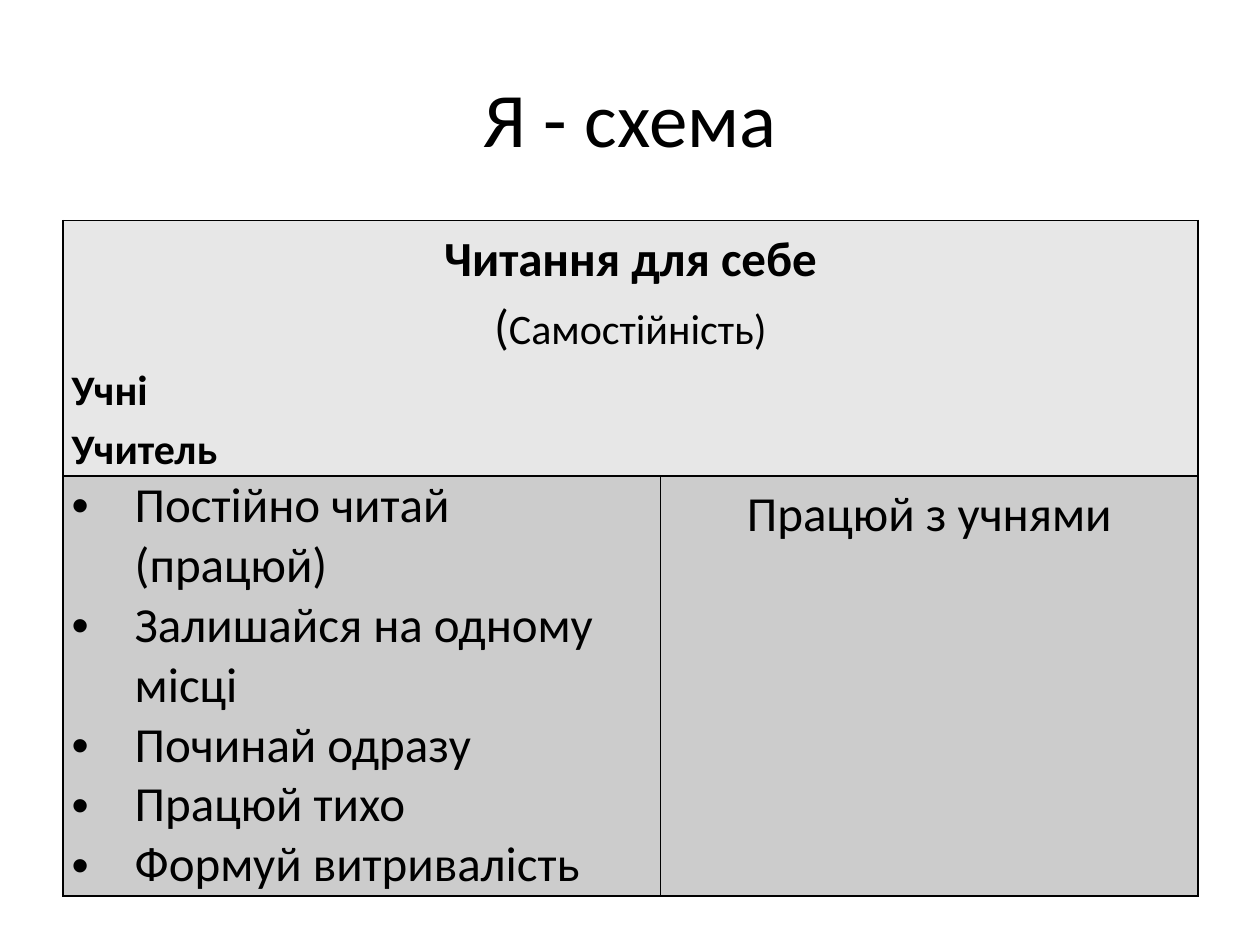
import pptx
import pptx.dml.color
import pptx.enum.text
import pptx.oxml
import pptx.oxml.ns
import pptx.util
from lxml import etree

Pt = pptx.util.Pt
ALIGN = pptx.enum.text.PP_ALIGN
ANCHOR = pptx.enum.text.MSO_ANCHOR

COLORS = {"text": "000000", "border": "000000", "header": "E7E7E7", "body": "CCCCCC"}
FONT = "Calibri"

# A paragraph is (style name, runs); a run is (text, size, bold).
TITLE = ("title", [("Я - схема", 44, False)])
HEADER = [
    ("centered", [("Читання для себе", 28, True)]),
    ("centered", [("(", 28, False), ("Самостійність)", 24, False)]),
    ("left", [("Учні", 24, True)]),
    ("left", [("Учитель", 24, True)]),
]
PUPIL_RULES = [
    "Постійно читай (працюй)",
    "Залишайся на одному місці",
    "Починай одразу",
    "Працюй тихо",
    "Формуй витривалість",
]
PUPILS = [("bullet", [(rule, 28, False)]) for rule in PUPIL_RULES]
TEACHER = [("centered", [("Працюй з учнями", 28, False)])]

STYLES = {
    "title": {"alignment": ALIGN.CENTER},
    "centered": {"alignment": ALIGN.CENTER, "line_spacing": 1.15},
    "left": {"alignment": ALIGN.LEFT, "line_spacing": 1.15},
    "bullet": {"alignment": ALIGN.LEFT},
}
CELL_FORMAT = {
    "margin_left": Pt(5),
    "margin_right": Pt(5),
    "margin_top": 0,
    "margin_bottom": 0,
    "vertical_anchor": ANCHOR.TOP,
}

MARGIN = 36
TITLE_TOP, TITLE_HEIGHT = 21.6, 90
TABLE_TOP = 126
COLUMN_WIDTHS = [341.5, 307]
ROW_HEIGHTS = [146, 240]
BULLET_INDENT = 36


def set_format(target, values):
    for name, value in values.items():
        setattr(target, name, value)


def add_bullet(paragraph):
    properties = paragraph._p.get_or_add_pPr()
    properties.set("marL", str(Pt(BULLET_INDENT)))
    properties.set("indent", str(-Pt(BULLET_INDENT)))
    font = etree.SubElement(properties, pptx.oxml.ns.qn("a:buFont"))
    font.set("typeface", "Arial")
    etree.SubElement(properties, pptx.oxml.ns.qn("a:buChar")).set("char", "•")


def write_paragraphs(text_frame, paragraphs):
    for index, (style, runs) in enumerate(paragraphs):
        paragraph = text_frame.add_paragraph() if index else text_frame.paragraphs[0]
        set_format(paragraph, STYLES[style])
        if style == "bullet":
            add_bullet(paragraph)
        for text, size, bold in runs:
            run = paragraph.add_run()
            run.text = text
            set_format(run.font, {"name": FONT, "size": Pt(size), "bold": bold})
            run.font.color.rgb = pptx.dml.color.RGBColor.from_string(COLORS["text"])


def add_borders(cell):
    """Draw the four edges; they must precede the fill in the cell properties."""
    properties = cell._tc.get_or_add_tcPr()
    for position, edge in enumerate(("lnL", "lnR", "lnT", "lnB")):
        line = pptx.oxml.parse_xml(
            f'<a:{edge} {pptx.oxml.ns.nsdecls("a")} w="{Pt(1)}"><a:solidFill>'
            f'<a:srgbClr val="{COLORS["border"]}"/></a:solidFill></a:{edge}>'
        )
        properties.insert(position, line)


def add_title(slide):
    title = slide.shapes.add_textbox(
        Pt(MARGIN), Pt(TITLE_TOP), Pt(720 - 2 * MARGIN), Pt(TITLE_HEIGHT)
    )
    set_format(title.text_frame, {"word_wrap": True, "vertical_anchor": ANCHOR.MIDDLE})
    write_paragraphs(title.text_frame, [TITLE])


def add_scheme_table(slide):
    table = slide.shapes.add_table(
        len(ROW_HEIGHTS), len(COLUMN_WIDTHS), Pt(MARGIN), Pt(TABLE_TOP),
        Pt(sum(COLUMN_WIDTHS)), Pt(sum(ROW_HEIGHTS)),
    ).table
    for column, width in zip(table.columns, COLUMN_WIDTHS):
        column.width = Pt(width)
    for row, height, fill in zip(table.rows, ROW_HEIGHTS, ("header", "body")):
        row.height = Pt(height)
        for cell in row.cells:
            set_format(cell, CELL_FORMAT)
            cell.fill.solid()
            cell.fill.fore_color.rgb = pptx.dml.color.RGBColor.from_string(COLORS[fill])
            add_borders(cell)
    table.cell(0, 0).merge(table.cell(0, 1))
    for position, paragraphs in {(0, 0): HEADER, (1, 0): PUPILS, (1, 1): TEACHER}.items():
        write_paragraphs(table.cell(*position).text_frame, paragraphs)


def main():
    presentation = pptx.Presentation()
    set_format(presentation, {"slide_width": Pt(720), "slide_height": Pt(540)})
    slide = presentation.slides.add_slide(presentation.slide_layouts[6])
    add_title(slide)
    add_scheme_table(slide)
    presentation.save("out.pptx")


if __name__ == "__main__":
    main()
